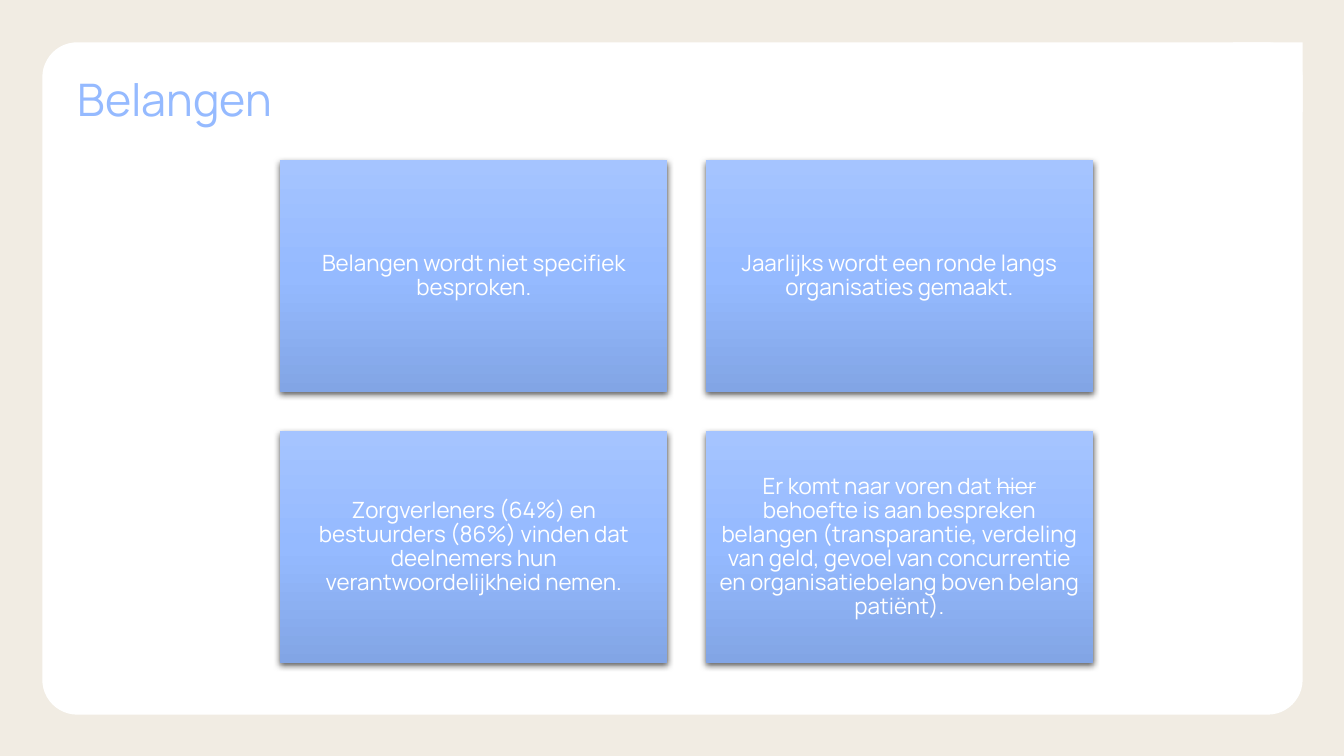
from pptx import Presentation
from pptx.dml.color import RGBColor
from pptx.enum.shapes import MSO_SHAPE as SHAPE
from pptx.enum.text import MSO_ANCHOR as ANCHOR, MSO_AUTO_SIZE as AUTO, PP_ALIGN as ALIGN
from pptx.oxml import parse_xml
from pptx.oxml.ns import nsdecls
from pptx.util import Inches, Pt

CARDS = [
    [("Belangen wordt niet specifiek besproken.", False)],
    [("Jaarlijks wordt een ronde langs organisaties gemaakt.", False)],
    [("Zorgverleners (64%) en bestuurders (86%) vinden dat deelnemers hun "
      "verantwoordelijkheid nemen.", False)],
    [("Er komt naar voren dat ", False),
     ("hier ", True),
     ("behoefte is aan bespreken belangen (transparantie, verdeling van geld, "
      "gevoel van concurrentie en organisatiebelang boven belang patiënt).", False)],
]


def rgb(color):
    return RGBColor.from_string(color)


class Deck:
    FONT = "Manrope"
    BACK, WHITE, BLUE = "F1ECE3", "FFFFFF", "95BAFF"
    STOPS = [(0, "A5C4FF"), (50, BLUE), (100, "82A5E5")]

    def __init__(self):
        self.prs = Presentation()
        self.prs.slide_width, self.prs.slide_height = Inches(13.33), Inches(7.5)
        self.s = self.prs.slides.add_slide(self.prs.slide_layouts[5])
        fill = self.s.background.fill
        fill.solid()
        fill.fore_color.rgb = rgb(self.BACK)

    def shape(self, kind, x, y, w, h):
        sp = self.s.shapes.add_shape(kind, Inches(x), Inches(y), Inches(w), Inches(h))
        sp.shadow.inherit = False
        sp.line.fill.background()
        sp.fill.solid()
        sp.fill.fore_color.rgb = rgb(self.WHITE)
        return sp

    def panel(self, x, y, w, h, corner):
        """White rounded panel with a square top right corner."""
        self.shape(SHAPE.ROUNDED_RECTANGLE, x, y, w, h).adjustments[0] = 0.052
        self.shape(SHAPE.RECTANGLE, x + w - corner, y, corner, corner)

    def frame(self, tf, inset, anchor):
        tf.word_wrap, tf.auto_size = True, AUTO.NONE
        tf.vertical_anchor = anchor
        tf.margin_left = tf.margin_right = tf.margin_top = tf.margin_bottom = Inches(inset)

    def format(self, p, size, color, align):
        p.alignment, p.line_spacing = align, 0.9
        p.font.name, p.font.size = self.FONT, Pt(size)
        p.font.color.rgb = rgb(color)

    def title(self, text, x, y, w, h):
        sp = self.s.shapes.title
        sp.left, sp.top, sp.width, sp.height = Inches(x), Inches(y), Inches(w), Inches(h)
        self.frame(sp.text_frame, 0, ANCHOR.TOP)
        sp.text_frame.text = text
        self.format(sp.text_frame.paragraphs[0], 32, self.BLUE, ALIGN.LEFT)

    def gradient(self, sp):
        stops = "".join(f'<a:gs pos="{pos * 1000}"><a:srgbClr val="{color}"/></a:gs>'
                        for pos, color in self.STOPS)
        sp.fill.background()
        old = sp._element.spPr.find("{*}noFill")
        old.getparent().replace(old, parse_xml(
            f'<a:gradFill {nsdecls("a")} rotWithShape="1"><a:gsLst>{stops}</a:gsLst>'
            '<a:lin ang="5400000" scaled="0"/></a:gradFill>'))

    def shadow(self, sp):
        effects = sp._element.spPr.find("{*}effectLst")
        effects.append(parse_xml(
            f'<a:outerShdw {nsdecls("a")} blurRad="{Pt(4.5)}" dist="{Pt(1.5)}" dir="5400000" '
            'algn="ctr" rotWithShape="0"><a:srgbClr val="000000"><a:alpha val="63000"/>'
            '</a:srgbClr></a:outerShdw>'))

    def card(self, runs, x, y, w, h):
        """Shaded card; runs are pairs of text and whether it is struck through."""
        sp = self.shape(SHAPE.RECTANGLE, x, y, w, h)
        self.gradient(sp)
        self.shadow(sp)
        self.frame(sp.text_frame, 0.07, ANCHOR.MIDDLE)
        p = sp.text_frame.paragraphs[0]
        self.format(p, 16, self.WHITE, ALIGN.CENTER)
        for text, struck in runs:
            r = p.add_run()
            r.text = text
            if struck:
                r.font._element.set("strike", "sngStrike")


def main():
    deck = Deck()
    deck.panel(0.42, 0.42, 12.5, 6.67, corner=0.69)
    deck.title("Belangen", 0.77, 0.77, 11.81, 0.49)
    for i, runs in enumerate(CARDS):
        row, col = divmod(i, 2)
        deck.card(runs, 2.78 + col * 4.22, 1.59 + row * 2.69, 3.84, 2.3)

    # The title placeholder was made first, so bring it above the panel.
    tree = deck.s.shapes._spTree
    tree.append(deck.s.shapes.title._element)
    deck.prs.save("out.pptx")


if __name__ == "__main__":
    main()
